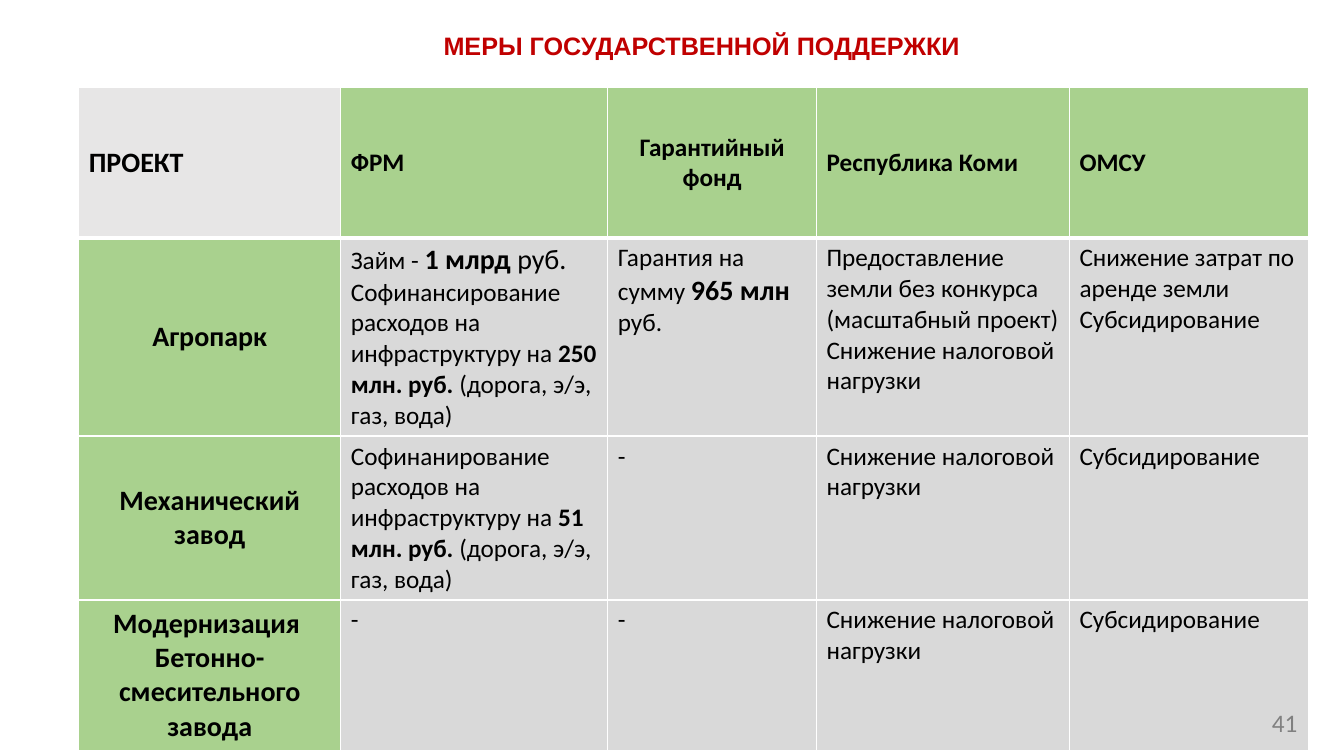
from dataclasses import dataclass

from lxml import etree
from pptx import Presentation
from pptx import util as u
from pptx.dml.color import RGBColor
from pptx.enum import text
from pptx.oxml import ns

GREEN = RGBColor(0xA9, 0xD1, 0x8E)
LIGHT_GRAY = RGBColor(0xE7, 0xE6, 0xE6)
GRAY = RGBColor(0xD9, 0xD9, 0xD9)
PAGE_GRAY = RGBColor(0x80, 0x80, 0x80)
RED = RGBColor(0xC0, 0x00, 0x00)
BLACK = RGBColor(0x00, 0x00, 0x00)
WHITE = RGBColor(0xFF, 0xFF, 0xFF)

LEFT = text.PP_ALIGN.LEFT
CENTER = text.PP_ALIGN.CENTER
RIGHT = text.PP_ALIGN.RIGHT
TOP = text.MSO_ANCHOR.TOP
MIDDLE = text.MSO_ANCHOR.MIDDLE

COLUMN_WIDTHS = (187.2, 190.8, 149, 180.7, 170.6)
ROW_HEIGHTS = (107.3, 136, 115.2, 107.3)


@dataclass(frozen=True)
class Part:
    words: str
    size: float = 18
    bold: bool = False


@dataclass(frozen=True)
class Cell:
    lines: tuple[tuple[Part, ...], ...]
    fill: RGBColor = GRAY
    align: text.PP_ALIGN = LEFT
    anchor: text.MSO_ANCHOR = TOP


@dataclass(frozen=True)
class Label:
    words: str
    left: float
    top: float
    width: float
    size: float
    font: str
    color: RGBColor
    bold: bool
    align: text.PP_ALIGN
    wrap: bool


def heading(words: str, size: float = 18, fill: RGBColor = GREEN,
            align: text.PP_ALIGN = LEFT) -> Cell:
    return Cell(((Part(words, size, True),),), fill, align, MIDDLE)


def project(*lines: str) -> Cell:
    return Cell(tuple((Part(line, 20, True),) for line in lines), GREEN, CENTER, MIDDLE)


def measures(*lines: str) -> Cell:
    return Cell(tuple((Part(line),) for line in lines))


def infrastructure(amount: str) -> tuple[Part, ...]:
    return (Part("расходов на инфраструктуру на "), Part(amount, bold=True),
            Part(" (дорога, э/э, газ, вода)"))


TAX_RELIEF = "Снижение налоговой нагрузки"
SUBSIDY = "Субсидирование"

ROWS = (
    (heading("ПРОЕКТ", 20, LIGHT_GRAY), heading("ФРМ"),
     heading("Гарантийный фонд", align=CENTER), heading("Республика Коми"), heading("ОМСУ")),
    (project("Агропарк"),
     Cell(((Part("Займ - "), Part("1 млрд ", 20, True), Part("руб.", 20)),
           (Part("Софинансирование "), *infrastructure("250 млн. руб.")))),
     Cell(((Part("Гарантия на сумму "), Part("965 млн ", 20, True), Part("руб.")),)),
     measures("Предоставление земли без конкурса (масштабный проект)", TAX_RELIEF),
     measures("Снижение затрат по аренде земли", SUBSIDY)),
    (project("Механический завод"),
     Cell(((Part("Софинанирование "), *infrastructure("51 млн. руб.")),)),
     measures("-"), measures(TAX_RELIEF), measures(SUBSIDY)),
    (project("Модернизация ", "Бетонно-смесительного завода"),
     measures("-"), measures("-"), measures(TAX_RELIEF), measures(SUBSIDY)),
)

LABELS = (
    Label("41", 717.8, 501.8, 216, 18, "Calibri", PAGE_GRAY, False, RIGHT, True),
    Label("МЕРЫ ГОСУДАРСТВЕННОЙ ПОДДЕРЖКИ", 305, 18, 392.4, 18, "Arial", RED, True,
          CENTER, False),
)


def add_borders(table_cell, row: int) -> None:
    properties = table_cell._tc.get_or_add_tcPr()
    widths = {"L": 1, "R": 1, "T": 3 if row == 1 else 1, "B": 3 if row == 0 else 1}
    for side, width in widths.items():
        line = etree.SubElement(properties, ns.qn(f"a:ln{side}"), w=str(u.Pt(width)))
        fill = etree.SubElement(line, ns.qn("a:solidFill"))
        etree.SubElement(fill, ns.qn("a:srgbClr"), val=str(WHITE))


def fill_cell(table_cell, cell: Cell, row: int) -> None:
    add_borders(table_cell, row)
    table_cell.fill.solid()
    table_cell.fill.fore_color.rgb = cell.fill
    table_cell.vertical_anchor = cell.anchor
    text_frame = table_cell.text_frame
    text_frame.text = "\n".join("" for _ in cell.lines)
    for paragraph, parts in zip(text_frame.paragraphs, cell.lines):
        paragraph.alignment = cell.align
        for part in parts:
            run = paragraph.add_run()
            run.text = part.words
            run.font.name = "Calibri"
            run.font.size = u.Pt(part.size)
            run.font.bold = part.bold
            run.font.color.rgb = BLACK


def add_support_table(slide) -> None:
    frame = slide.shapes.add_table(
        len(ROWS), len(COLUMN_WIDTHS), u.Pt(56.2), u.Pt(62.6),
        u.Pt(sum(COLUMN_WIDTHS)), u.Pt(sum(ROW_HEIGHTS)))
    table = frame.table
    table.first_row = False
    table.horz_banding = False
    for column, width in zip(table.columns, COLUMN_WIDTHS):
        column.width = u.Pt(width)
    for index, (row, height, cells) in enumerate(zip(table.rows, ROW_HEIGHTS, ROWS)):
        row.height = u.Pt(height)
        for table_cell, cell in zip(row.cells, cells):
            fill_cell(table_cell, cell, index)


def add_label(slide, label: Label) -> None:
    shape = slide.shapes.add_textbox(
        u.Pt(label.left), u.Pt(label.top), u.Pt(label.width), u.Pt(28.8))
    text_frame = shape.text_frame
    text_frame.word_wrap = label.wrap
    text_frame.vertical_anchor = MIDDLE
    text_frame.text = label.words
    paragraph = text_frame.paragraphs[0]
    paragraph.alignment = label.align
    font = paragraph.runs[0].font
    font.name = label.font
    font.size = u.Pt(label.size)
    font.bold = label.bold
    font.color.rgb = label.color


def main() -> None:
    presentation = Presentation()
    presentation.slide_width = u.Pt(960)
    presentation.slide_height = u.Pt(540)
    slide = presentation.slides.add_slide(presentation.slide_layouts[6])
    add_support_table(slide)
    for label in LABELS:
        add_label(slide, label)
    presentation.save("out.pptx")


if __name__ == "__main__":
    main()
